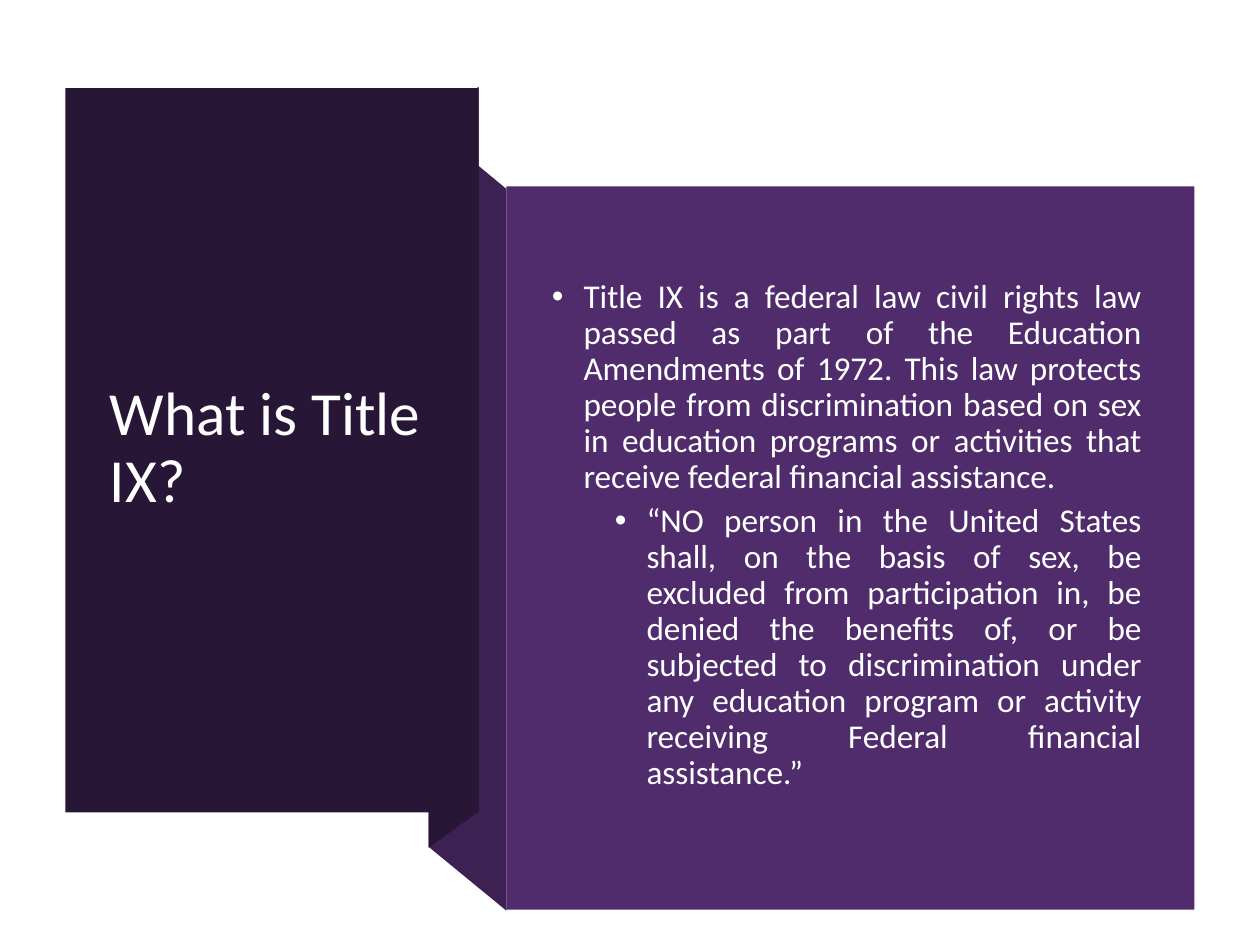
from lxml.etree import SubElement
from pptx import Presentation
from pptx.dml.color import RGBColor
from pptx.enum.shapes import MSO_SHAPE
from pptx.enum.text import MSO_ANCHOR, MSO_AUTO_SIZE, PP_ALIGN
from pptx.oxml.ns import qn
from pptx.util import Cm, Pt

TITLE = "What is Title IX?"
# text, level, left margin in cm, space before in points
POINTS = [
    ("Title IX is a federal law civil rights law passed as part of the Education "
     "Amendments of 1972. This law protects people from discrimination based on sex "
     "in education programs or activities that receive federal financial assistance.",
     0, 0.64, 0),
    ("“NO person in the United States shall, on the basis of sex, be excluded from "
     "participation in, be denied the benefits of, or be subjected to discrimination "
     "under any education program or activity receiving Federal financial assistance.”",
     1, 1.91, 5),
]
HANGING = 0.64

DARK, FOLD, PURPLE = "281636", "3C2152", "502C6D"
TITLE_PANEL = (1.32, 1.78, 8.33, 14.6)
BODY_PANEL = (10.21, 3.76, 13.87, 14.58)
FOLD_BACK = [(10.21, 18.36), (8.64, 17.07), (8.64, 2.51), (10.21, 3.81)]
FOLD_FRONT = [(9.65, 16.36), (8.64, 17.09), (8.64, 2.49), (9.65, 1.75)]
TITLE_BOX = (1.96, 2.72, 7.06, 12.67)
BODY_BOX = (10.87, 4.78, 12.4, 12.04)

FRAME_FORMAT = {
    "word_wrap": True,
    "auto_size": MSO_AUTO_SIZE.NONE,
    "vertical_anchor": MSO_ANCHOR.MIDDLE,
}


def rgb(code):
    return RGBColor.from_string(code)


def apply(target, values):
    for name, value in values.items():
        setattr(target, name, value)


def paint(shape, color):
    shape.shadow.inherit = False
    shape.fill.solid()
    shape.fill.fore_color.rgb = rgb(color)
    shape.line.fill.background()


def add_panel(box, color):
    paint(slide.shapes.add_shape(MSO_SHAPE.RECTANGLE, *map(Cm, box)), color)


def add_fold(corners, color):
    start, *rest = [(Cm(x), Cm(y)) for x, y in corners]
    builder = slide.shapes.build_freeform(*start)
    builder.add_line_segments(rest, close=True)
    paint(builder.convert_to_shape(), color)


def place(placeholder, box):
    """Position a placeholder, bring it to the front and return its text frame."""
    apply(placeholder, dict(zip(("left", "top", "width", "height"), map(Cm, box))))
    placeholder.element.getparent().append(placeholder.element)
    apply(placeholder.text_frame, FRAME_FORMAT)
    return placeholder.text_frame


def write(paragraph, text, size, color, **layout):
    apply(paragraph, {"line_spacing": 0.9, "space_before": Pt(0), **layout})
    run = paragraph.add_run()
    run.text = text
    apply(run.font, {"name": "Calibri", "size": Pt(size)})
    run.font.color.rgb = rgb(color)


def add_bullet(paragraph, margin):
    properties = paragraph._p.get_or_add_pPr()
    properties.set("marL", str(Cm(margin)))
    properties.set("indent", str(-Cm(HANGING)))
    SubElement(properties, qn("a:buFont"), typeface="Arial")
    SubElement(properties, qn("a:buChar"), char="•")


deck = Presentation()
deck.slide_width, deck.slide_height = Cm(25.4), Cm(19.05)
slide = deck.slides.add_slide(deck.slide_layouts[1])

add_fold(FOLD_BACK, FOLD)
add_fold(FOLD_FRONT, DARK)
add_panel(TITLE_PANEL, DARK)
add_panel(BODY_PANEL, PURPLE)

heading = place(slide.shapes.title, TITLE_BOX)
write(heading.paragraphs[0], TITLE, 35, "FFFFFF", alignment=PP_ALIGN.LEFT)

body = place(slide.placeholders[1], BODY_BOX)
for index, (text, level, margin, before) in enumerate(POINTS):
    paragraph = body.add_paragraph() if index else body.paragraphs[0]
    add_bullet(paragraph, margin)
    write(paragraph, text, 19, "FEFFFF", level=level,
          space_before=Pt(before), alignment=PP_ALIGN.JUSTIFY)

deck.save("out.pptx")
